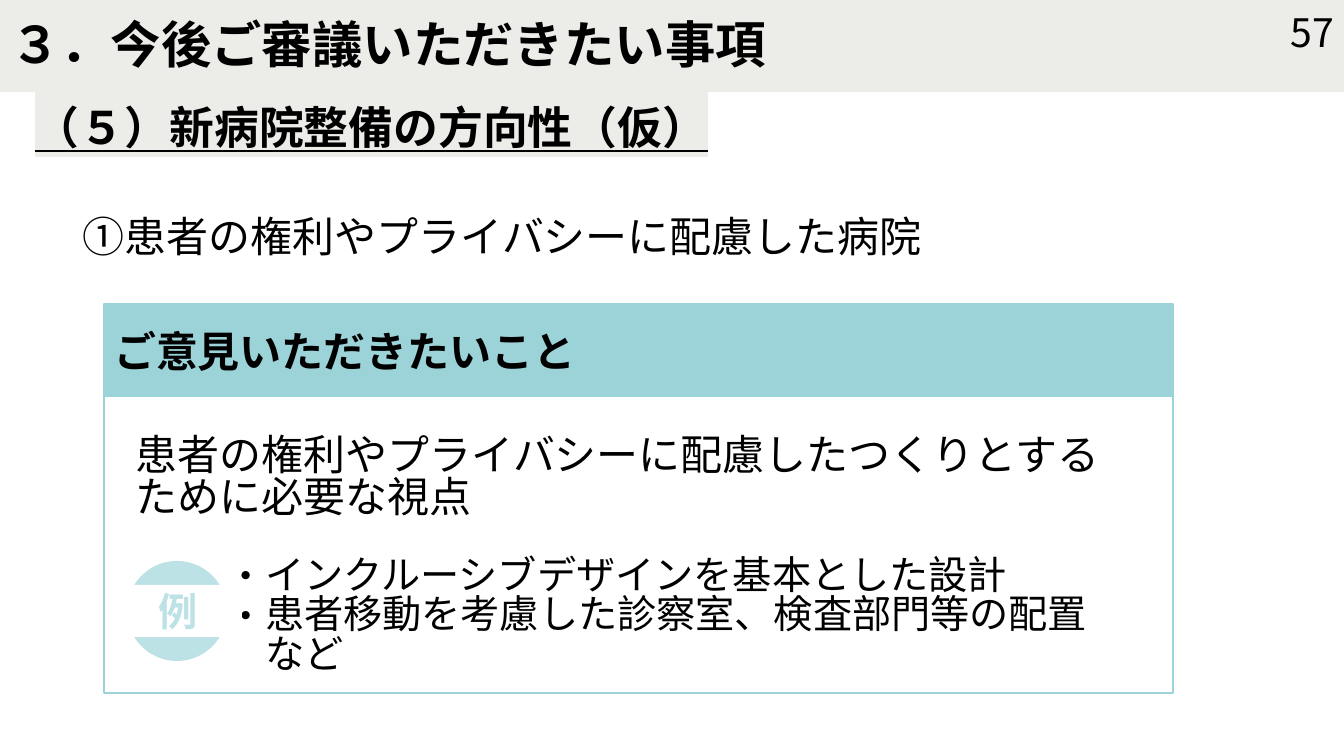
from lxml import etree
from pptx import Presentation
from pptx.dml.color import RGBColor
from pptx.enum.shapes import MSO_SHAPE
from pptx.enum.text import MSO_ANCHOR, MSO_AUTO_SIZE, PP_ALIGN
from pptx.oxml.ns import qn
from pptx.util import Emu, Pt

OVAL, RECT = MSO_SHAPE.OVAL, MSO_SHAPE.RECTANGLE
TOP, MIDDLE = MSO_ANCHOR.TOP, MSO_ANCHOR.MIDDLE
LEFT, CENTER, RIGHT = PP_ALIGN.LEFT, PP_ALIGN.CENTER, PP_ALIGN.RIGHT
NO_FIT = MSO_AUTO_SIZE.NONE

SANS, MONO = "Noto Sans CJK JP", "Noto Sans Mono"
COLORS = {"ink": "000000", "paper": "FFFFFF", "band": "ECEDE8",
          "teal": "9BD3D9", "pale": "BCE2E6"}

TITLE = "３．今後ご審議いただきたい事項"
PAGE = "57"
SECTION = "（５）新病院整備の方向性（仮）"
TOPIC = "①患者の権利やプライバシーに配慮した病院"
REQUEST = "ご意見いただきたいこと"
VIEWPOINT = ["患者の権利やプライバシーに配慮したつくりとする", "ために必要な視点"]
BADGE = "例"
EXAMPLES = [("・", "インクルーシブデザインを基本とした設計"),
            ("・", "患者移動を考慮した診察室、検査部門等の配置"),
            ("", "など")]

SLIDE_W, SLIDE_H = 1344, 756
PX = 914400 / 100.8
INSET_X, INSET_Y = 10, 5
TIGHT = 0.84
EXAMPLE_INDENT = 39
CARD_X, CARD_Y, CARD_W, CARD_H, REQUEST_H = 104, 304, 1069, 389, 93


def px(value):
    return Emu(round(value * PX))


def box(*lengths):
    return [px(length) for length in lengths]


def rgb(name):
    return RGBColor.from_string(COLORS[name])


def write(shape, lines, size, bold=False, color="ink", face=SANS,
          align=LEFT, anchor=MIDDLE, spacing=1.0, indent=0):
    frame = shape.text_frame
    frame.word_wrap = True
    frame.auto_size = NO_FIT
    frame.vertical_anchor = anchor
    frame.margin_left = frame.margin_right = px(INSET_X)
    frame.margin_top = frame.margin_bottom = px(INSET_Y)
    for index, (bullet, line) in enumerate(lines):
        paragraph = frame.paragraphs[0] if index == 0 else frame.add_paragraph()
        paragraph.add_run().text = line
        paragraph.alignment = align
        paragraph.line_spacing = spacing
        paragraph.space_before = paragraph.space_after = Pt(0)
        properties = paragraph._p.get_or_add_pPr()
        properties.set("marL", str(px(indent)))
        properties.set("indent", str(-px(indent) if bullet else 0))
        if bullet:
            etree.SubElement(properties, qn("a:buFont")).set("typeface", face)
            etree.SubElement(properties, qn("a:buChar")).set("char", bullet)
        else:
            etree.SubElement(properties, qn("a:buNone"))
        font = paragraph.font
        font.size = Pt(size)
        font.bold = bold
        font.name = face
        font.color.rgb = rgb(color)
        defaults = properties.find(qn("a:defRPr"))
        etree.SubElement(defaults, qn("a:ea")).set("typeface", face)


def plain(lines):
    return [("", line) for line in lines]


def add_block(shapes, kind, area, fill=None, line=None):
    shape = shapes.add_shape(kind, *box(*area))
    shape.shadow.inherit = False
    if fill:
        shape.fill.solid()
        shape.fill.fore_color.rgb = rgb(fill)
    else:
        shape.fill.background()
    if line:
        shape.line.color.rgb = rgb(line)
        shape.line.width = Pt(1)
    else:
        shape.line.fill.background()
    return shape


def place(placeholder, area):
    placeholder.left, placeholder.top, placeholder.width, placeholder.height = box(*area)


def main():
    deck = Presentation()
    deck.slide_width, deck.slide_height = box(SLIDE_W, SLIDE_H)
    slide = deck.slides.add_slide(deck.slide_layouts[1])
    shapes = slide.shapes

    title, examples = slide.placeholders
    place(title, (0, 0, SLIDE_W, 92))
    title.fill.solid()
    title.fill.fore_color.rgb = rgb("band")
    write(title, plain([TITLE]), 36, bold=True, spacing=0.95)

    place(examples, (216, 559, 1128, 116))
    write(examples, EXAMPLES, 28, spacing=TIGHT, indent=EXAMPLE_INDENT)

    page = shapes.add_textbox(*box(1016, 12, 328, 40))
    write(page, plain([PAGE]), 28, align=RIGHT)

    section = shapes.add_textbox(*box(25, 103, 1293, 64))
    write(section, plain([SECTION]), 32, bold=True, anchor=TOP, spacing=TIGHT)
    heading = section.text_frame.paragraphs[0].runs[0]
    heading.font.underline = True
    highlight = etree.SubElement(heading.font._element, qn("a:highlight"))
    etree.SubElement(highlight, qn("a:srgbClr")).set("val", COLORS["band"])

    topic = shapes.add_textbox(*box(73, 214, 1166, 62))
    write(topic, plain([TOPIC]), 30, anchor=TOP, spacing=TIGHT)

    viewpoint = shapes.add_textbox(*box(126, 428, 1093, 102))
    write(viewpoint, plain(VIEWPOINT), 30, spacing=TIGHT)

    badge = shapes.add_group_shape().shapes
    add_block(badge, OVAL, (127, 561, 100, 100), fill="pale")
    label = add_block(badge, RECT, (115, 585, 127, 52), fill="paper")
    write(label, plain([BADGE]), 28, bold=True, color="pale", face=MONO, align=CENTER)

    request = add_block(shapes, RECT, (CARD_X, CARD_Y, CARD_W, REQUEST_H), fill="teal")
    write(request, plain([REQUEST]), 30, bold=True)
    add_block(shapes, RECT, (CARD_X, CARD_Y, CARD_W, CARD_H), line="teal")

    deck.save("out.pptx")


if __name__ == "__main__":
    main()
